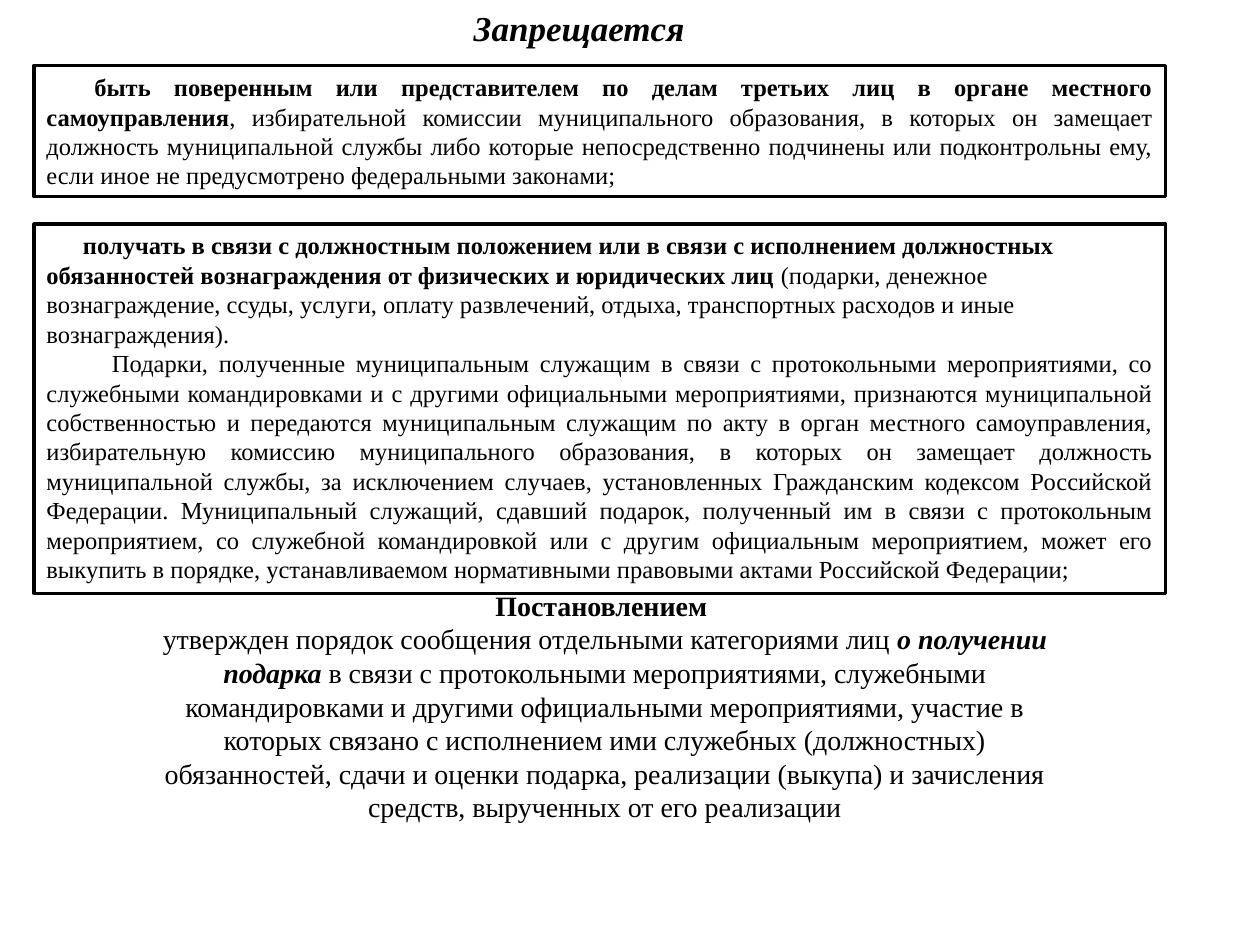
from pptx import Presentation
from pptx.dml.color import RGBColor
from pptx.enum.shapes import MSO_SHAPE
from pptx.enum.text import MSO_ANCHOR, MSO_AUTO_SIZE, PP_ALIGN
from pptx.util import Inches, Pt

BLACK, WHITE = "000000", "FFFFFF"


def paint(color_format, color):
    color_format.rgb = RGBColor.from_string(color)


def write(frame, paragraphs, size, anchor=MSO_ANCHOR.TOP):
    """Fill a frame with (alignment, first-line indent, [(text, style)]); style holds b and/or i."""
    frame.word_wrap = True
    frame.auto_size = MSO_AUTO_SIZE.SHAPE_TO_FIT_TEXT
    frame.vertical_anchor = anchor
    for number, (alignment, indent, parts) in enumerate(paragraphs):
        paragraph = frame.add_paragraph() if number else frame.paragraphs[0]
        paragraph.alignment = alignment
        if indent:
            properties = paragraph._p.get_or_add_pPr()
            properties.set("marL", "0")
            properties.set("indent", str(Inches(indent)))
        for text, style in parts:
            run = paragraph.add_run()
            run.text = text
            run.font.name = "Times New Roman"
            run.font.size = Pt(size)
            run.font.bold = "b" in style
            run.font.italic = "i" in style
            paint(run.font.color, BLACK)


prs = Presentation()
prs.slide_width, prs.slide_height = Inches(10), Inches(7.5)
slide = prs.slides.add_slide(prs.slide_layouts[5])

representation = [
    (PP_ALIGN.JUSTIFY, 0.38, [
        ("быть поверенным или представителем по делам третьих лиц в органе "
         "местного самоуправления", "b"),
        (", избирательной комиссии муниципального образования, в которых он замещает "
         "должность муниципальной службы либо которые непосредственно подчинены или "
         "подконтрольны ему, если иное не предусмотрено федеральными законами;", ""),
    ]),
]
rewards = [
    (PP_ALIGN.LEFT, 0.29, [
        ("получать в связи с должностным положением или в связи с исполнением "
         "должностных обязанностей вознаграждения от физических и юридических лиц ", "b"),
        ("(подарки, денежное вознаграждение, ссуды, услуги, оплату развлечений, отдыха, "
         "транспортных расходов и иные вознаграждения).", ""),
    ]),
    (PP_ALIGN.JUSTIFY, 0.52, [
        ("Подарки, полученные муниципальным служащим в связи с протокольными "
         "мероприятиями, со служебными командировками и с другими официальными "
         "мероприятиями, признаются муниципальной собственностью и передаются "
         "муниципальным служащим по акту в орган местного самоуправления, избирательную "
         "комиссию муниципального образования, в которых он замещает должность "
         "муниципальной службы, за исключением случаев, установленных Гражданским "
         "кодексом Российской Федерации. Муниципальный служащий, сдавший подарок, "
         "полученный им в связи с протокольным мероприятием, со служебной командировкой "
         "или с другим официальным мероприятием, может его выкупить в порядке, "
         "устанавливаемом нормативными правовыми актами Российской Федерации;", ""),
    ]),
]
decree = [
    (PP_ALIGN.CENTER, 0, [("Постановлением ", "b")]),
    (PP_ALIGN.CENTER, 0, [
        ("утвержден порядок сообщения отдельными категориями лиц ", ""),
        ("о получении подарка ", "bi"),
        ("в связи с протокольными мероприятиями, служебными командировками и другими "
         "официальными мероприятиями, участие в которых связано с исполнением ими "
         "служебных (должностных) обязанностей, сдачи и оценки подарка, реализации "
         "(выкупа) и зачисления средств, вырученных от его реализации", ""),
    ]),
]

for top, height, anchor, prohibition in [
    (0.52, 1.04, MSO_ANCHOR.MIDDLE, representation),
    (1.78, 2.93, MSO_ANCHOR.TOP, rewards),
]:
    box = slide.shapes.add_shape(
        MSO_SHAPE.RECTANGLE, Inches(0.27), Inches(top), Inches(8.98), Inches(height))
    box.shadow.inherit = False
    box.fill.solid()
    paint(box.fill.fore_color, WHITE)
    paint(box.line.color, BLACK)
    box.line.width = Pt(2)
    write(box.text_frame, prohibition, 14, anchor)

heading = slide.shapes.title
heading.left, heading.top = Inches(3.66), Inches(0)
heading.width, heading.height = Inches(2.28), Inches(0.44)
write(heading.text_frame, [(PP_ALIGN.LEFT, 0, [("Запрещается", "bi")])], 20)

decree_note = slide.shapes.add_textbox(Inches(1.06), Inches(4.62), Inches(7.48), Inches(1.99))
write(decree_note.text_frame, decree, 16)

prs.save("out.pptx")
